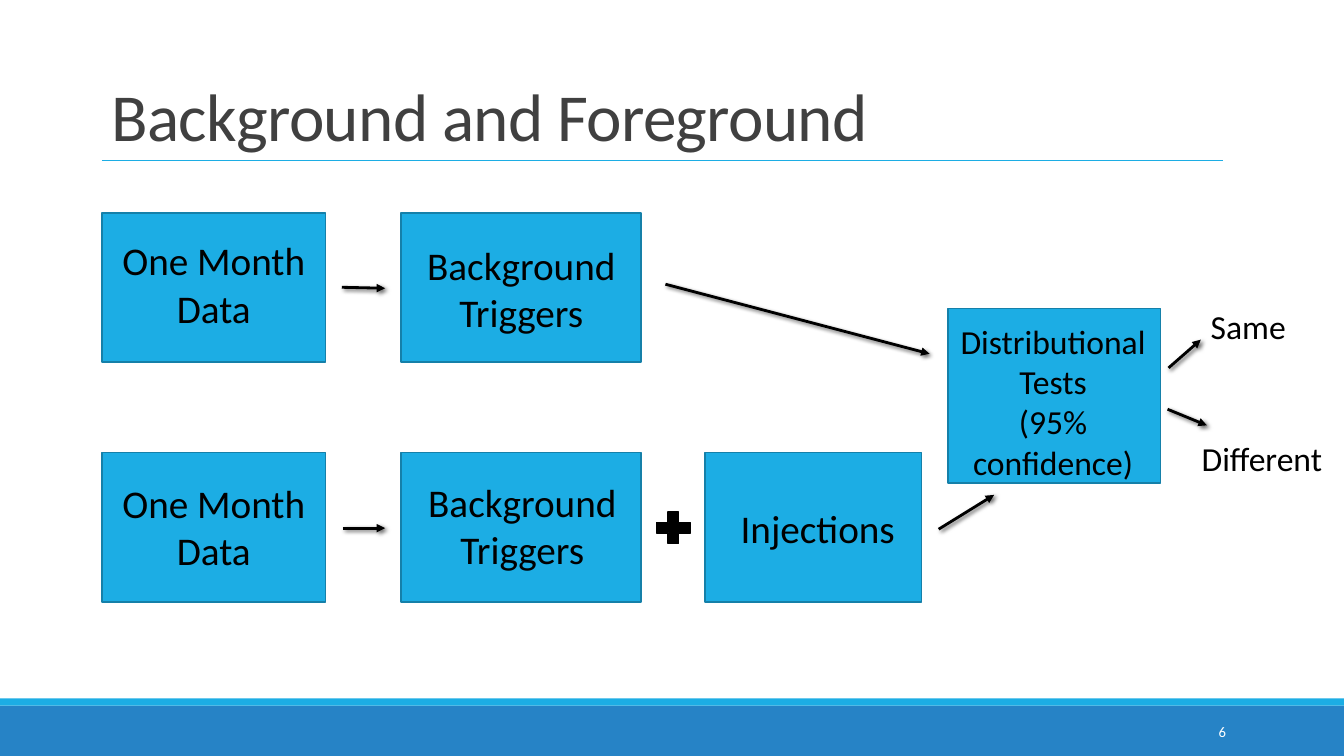
from dataclasses import dataclass

from lxml import etree
from pptx import Presentation
from pptx.dml.color import RGBColor
from pptx.enum.shapes import MSO_CONNECTOR as Line, MSO_SHAPE as Shape
from pptx.enum.text import MSO_ANCHOR as Anchor, MSO_AUTO_SIZE as AutoSize, PP_ALIGN as Align
from pptx.oxml.ns import qn
from pptx.util import Inches, Pt


@dataclass(frozen=True)
class Theme:
    font: str = "Calibri"
    accent: str = "1CADE4"
    edge: str = "1580A9"
    footer: str = "2683C6"
    heading: str = "404040"
    ink: str = "000000"
    paper: str = "FFFFFF"
    title_size: float = 48
    step_size: float = 28
    test_size: float = 24
    number_size: float = 10.5


THEME = Theme()
WIDTH, HEIGHT = 13.33, 7.5
MARGIN = 1.01
STEP_HEIGHT = 1.48

# Columns: left, width. Rows: top.
COLUMNS = {"data": (MARGIN, 2.22), "triggers": (3.98, 2.38), "injections": (6.99, 2.15)}
ROWS = {"background": 2.11, "foreground": 4.49}
LABEL_WIDTH = 2.22

TITLE = "Background and Foreground"
SLIDE_NUMBER = "6"

# Column, row, paragraphs, label left, label offset from the row top, label height
STEPS = [
    ("data", "background", ["One Month Data"], MARGIN, 0.19, 1.04),
    ("data", "foreground", ["One Month Data"], MARGIN, 0.22, 1.04),
    ("triggers", "background", ["Background", "Triggers"], 4.06, 0.23, 1.04),
    ("triggers", "foreground", ["Background Triggers"], 4.07, 0.21, 1.04),
    ("injections", "foreground", ["Injections"], 7.0, 0.46, 0.57),
]
PLUS = (6.45, 5.02, 0.46, 0.43)
TEST_BOX = (9.4, 3.06, 2.11, 1.73)
TEST_LABEL = (9.41, 3.13, 2.07, 1.72)
TEST = ["Distributional Tests", "(95% confidence)"]
OUTCOMES = [("Same", (11.91, 2.99, 0.99, 0.5)), ("Different", (11.82, 4.3, 1.47, 0.5))]
ARROWS = [
    ((3.39, 2.85), (3.82, 2.86)),    # data to triggers, background
    ((3.4, 5.24), (3.82, 5.24)),     # data to triggers, foreground
    ((9.31, 5.25), (9.86, 4.91)),    # injections to tests
    ((6.6, 2.82), (9.22, 3.51)),     # background triggers to tests
    ((11.59, 3.65), (11.91, 3.37)),  # tests to same
    ((11.58, 4.06), (11.97, 4.22)),  # tests to different
]


def rgb(color):
    return RGBColor.from_string(color)


def add_block(slide, box, fill, edge=None, kind=Shape.RECTANGLE):
    block = slide.shapes.add_shape(kind, *map(Inches, box))
    block.shadow.inherit = False
    block.fill.solid()
    block.fill.fore_color.rgb = rgb(fill)
    if edge:
        block.line.color.rgb = rgb(edge)
        block.line.width = Pt(1.25)
    else:
        block.line.fill.background()


def add_label(slide, box, paragraphs, size, color=THEME.ink, align=Align.CENTER,
              anchor=Anchor.TOP, grow=True):
    frame = slide.shapes.add_textbox(*map(Inches, box)).text_frame
    frame.word_wrap = True
    frame.vertical_anchor = anchor
    frame.auto_size = AutoSize.SHAPE_TO_FIT_TEXT if grow else AutoSize.NONE
    frame.text = "\n".join(paragraphs)
    for paragraph in frame.paragraphs:
        paragraph.alignment = align
        paragraph.font.name = THEME.font
        paragraph.font.size = Pt(size)
        paragraph.font.color.rgb = rgb(color)
    return frame


def add_line(slide, start, end, color, width):
    """Draw a straight line and return it with its empty effect list."""
    line = slide.shapes.add_connector(Line.STRAIGHT, *map(Inches, start + end))
    line.line.color.rgb = rgb(color)
    line.line.width = Pt(width)
    effects = etree.SubElement(line._element.spPr, qn("a:effectLst"))
    return line, effects


def add_arrow(slide, start, end):
    arrow, effects = add_line(slide, start, end, THEME.ink, 2)
    etree.SubElement(arrow.line._get_or_add_ln(), qn("a:tailEnd"), type="triangle")
    shadow = etree.SubElement(effects, qn("a:outerShdw"), blurRad=str(Pt(3)),
                              dist=str(Pt(2)), dir=str(45 * 60000), rotWithShape="0")
    tint = etree.SubElement(shadow, qn("a:srgbClr"), val=THEME.ink)
    etree.SubElement(tint, qn("a:alpha"), val="60000")


def add_frame(slide):
    add_block(slide, (0, 7, WIDTH, 0.5), THEME.footer)
    add_block(slide, (0, 6.93, WIDTH, 0.07), THEME.accent)
    title = add_label(slide, (MARGIN, 0.76, 11, 0.83), [TITLE], THEME.title_size,
                      THEME.heading, Align.LEFT, Anchor.BOTTOM, grow=False).paragraphs[0]
    title.line_spacing = 0.85
    title.runs[0]._r.get_or_add_rPr().set("spc", "-50")
    add_line(slide, (MARGIN, 1.59), (12.13, 1.59), THEME.accent, 1)
    add_label(slide, (10.83, 7.06, 1.43, 0.4), [SLIDE_NUMBER], THEME.number_size,
              THEME.paper, Align.RIGHT, Anchor.MIDDLE, grow=False)


def add_flow(slide):
    for column, row, paragraphs, label_left, offset, label_height in STEPS:
        left, width = COLUMNS[column]
        top = ROWS[row]
        add_block(slide, (left, top, width, STEP_HEIGHT), THEME.accent, THEME.edge)
        add_label(slide, (label_left, top + offset, LABEL_WIDTH, label_height),
                  paragraphs, THEME.step_size)
    add_block(slide, PLUS, THEME.ink, THEME.ink, Shape.MATH_PLUS)
    add_block(slide, TEST_BOX, THEME.accent, THEME.edge)
    add_label(slide, TEST_LABEL, TEST, THEME.test_size)
    for outcome, box in OUTCOMES:
        add_label(slide, box, [outcome], THEME.test_size, align=Align.LEFT)
    for start, end in ARROWS:
        add_arrow(slide, start, end)


def main():
    deck = Presentation()
    deck.slide_width, deck.slide_height = Inches(WIDTH), Inches(HEIGHT)
    slide = deck.slides.add_slide(deck.slide_layouts[6])
    add_frame(slide)
    add_flow(slide)
    deck.save("out.pptx")


if __name__ == "__main__":
    main()
